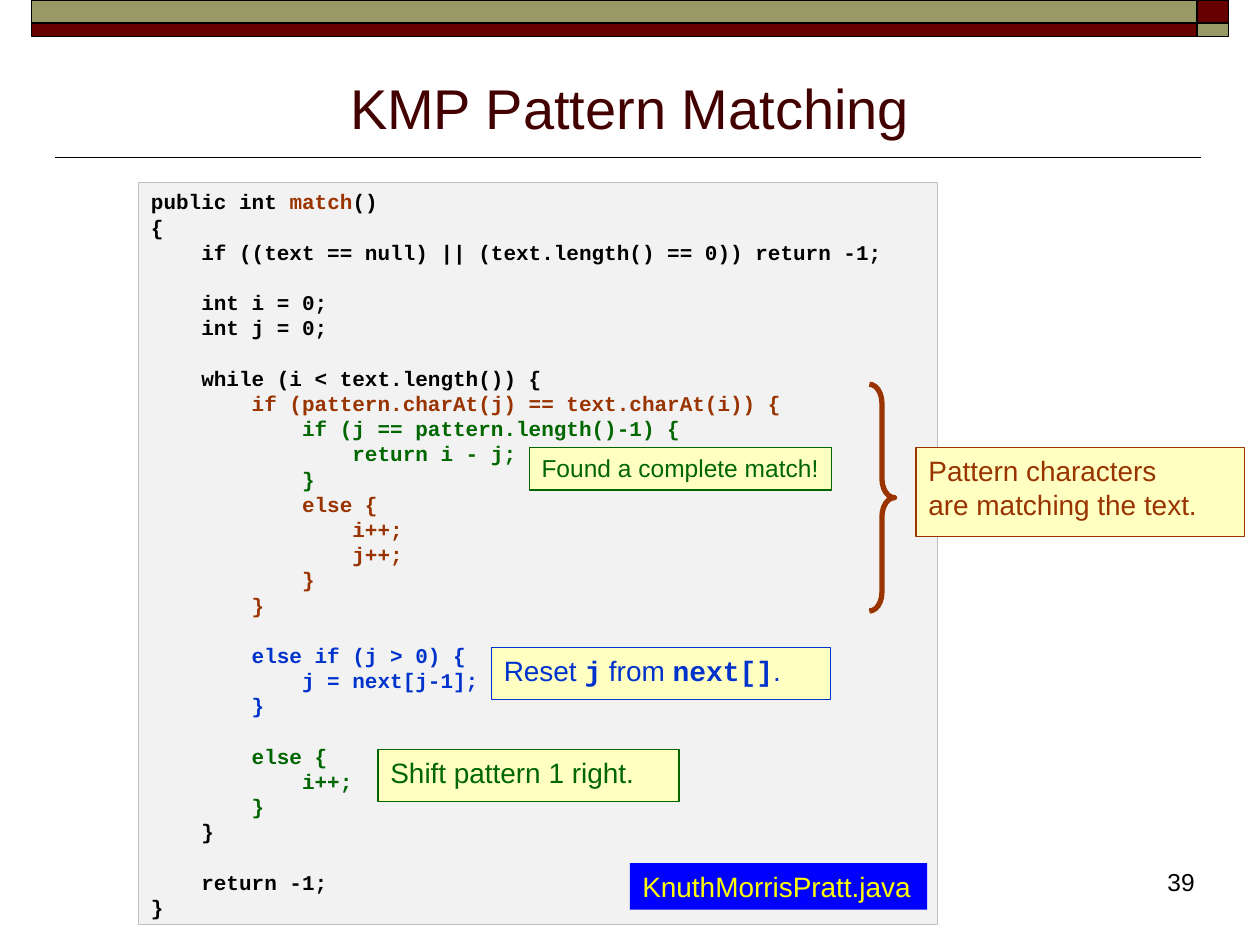
from lxml import etree
from pptx import Presentation
from pptx import util as u
from pptx.dml.color import RGBColor
from pptx.enum import shapes, text
from pptx.oxml import ns

COLORS = {
    "black": "000000", "maroon": "660000", "olive": "999966", "title": "420000",
    "panel": "F2F2F2", "border": "BFBFBF", "note": "FFFFC2", "rust": "993300",
    "green": "006600", "blue": "0033CC", "label": "0000FF", "yellow": "FFFF00",
}
SANS, MONO = "Arial", "Courier New"

CODE = [
    ("black", "public int "),
    ("rust", "match"),
    ("black", """()
{
    if ((text == null) || (text.length() == 0)) return -1;

    int i = 0;
    int j = 0;

    while (i < text.length()) {
"""),
    ("rust", """        if (pattern.charAt(j) == text.charAt(i)) {
"""),
    ("green", """            if (j == pattern.length()-1) {
                return i - j;
            }
"""),
    ("rust", """            else {
                i++;
                j++;
            }
        }

"""),
    ("blue", """        else if (j > 0) {
            j = next[j-1];
        }

"""),
    ("green", """        else {
            i++;
        }
"""),
    ("black", """    }

    return -1;
}"""),
]

NOTES = [
    ((7.27, 3.55, 2.61, 0.71), "rust", 16,
     [("Pattern characters\nare matching the text.", SANS)]),
    ((4.2, 3.55, 2.4, 0.34), "green", 14, [("Found a complete match!", SANS)]),
    ((3.9, 5.14, 2.69, 0.41), "blue", 16,
     [("Reset ", SANS), ("j", MONO), (" from ", SANS), ("next[]", MONO), (".", SANS)]),
    ((3, 5.95, 2.39, 0.41), "green", 16, [("Shift pattern 1 right.", SANS)]),
]


def rgb(name):
    """Return the named colour."""
    return RGBColor.from_string(COLORS[name])


def inches(box):
    """Convert a box of numbers to lengths."""
    return [u.Inches(value) for value in box]


def format_run(run, color, size, font):
    """Set the look of a run; code type is bold."""
    run.font.name, run.font.size = font, u.Pt(size)
    run.font.bold = font == MONO
    run.font.color.rgb = rgb(color)


def write_segments(frame, segments, size):
    """Write (text, colour, font) segments, with a paragraph for each line."""
    paragraph = frame.paragraphs[0]
    for content, color, font in segments:
        for index, line in enumerate(content.split("\n")):
            if index:
                paragraph = frame.add_paragraph()
            if line:
                run = paragraph.add_run()
                run.text = line
                format_run(run, color, size, font)
    for paragraph in frame.paragraphs:
        paragraph.alignment = text.PP_ALIGN.LEFT
        paragraph.line_spacing = u.Pt(size * 1.2)


def add_block(slide, box, fill, line=None, width=0.75):
    """Add a plain rectangle."""
    shape = slide.shapes.add_shape(shapes.MSO_SHAPE.RECTANGLE, *inches(box))
    shape.shadow.inherit = False
    shape.fill.solid()
    shape.fill.fore_color.rgb = rgb(fill)
    if line:
        shape.line.color.rgb = rgb(line)
        shape.line.width = u.Pt(width)
    else:
        shape.line.fill.background()
    return shape


def add_text_block(slide, box, fill, line, segments, size):
    """Add a rectangle holding unwrapped text from its top left."""
    frame = add_block(slide, box, fill, line).text_frame
    frame.word_wrap = False
    frame.vertical_anchor = text.MSO_ANCHOR.TOP
    write_segments(frame, segments, size)


def add_banner(slide, box):
    """Add the two-row band with swapped colours at its right end."""
    left, top, width, height = box
    end, upper = 0.25, 0.18
    rows = [(top, upper, "olive", "maroon"),
            (top + upper, height - upper, "maroon", "olive")]
    for row_top, row_height, main, corner in rows:
        add_block(slide, (left, row_top, width - end, row_height), main, "black", 1)
        add_block(slide, (left + width - end, row_top, end, row_height), corner, "black", 1)


def add_title(slide, box):
    """Fill the title placeholder and rule a line below it."""
    title = slide.shapes.title
    title.left, title.top, title.width, title.height = inches(box)
    frame = title.text_frame
    frame.text = "KMP Pattern Matching"
    frame.vertical_anchor = text.MSO_ANCHOR.BOTTOM
    frame.paragraphs[0].alignment = text.PP_ALIGN.CENTER
    format_run(frame.paragraphs[0].runs[0], "title", 32, SANS)
    rule = slide.shapes.add_connector(
        shapes.MSO_CONNECTOR.STRAIGHT, *inches((0.44, 1.25, 9.53, 1.25)))
    rule.line.color.rgb = rgb("black")
    rule.line.width = u.Pt(1)
    etree.SubElement(rule._element.spPr, ns.qn("a:effectLst"))


def add_code(slide, box):
    """Add the listing panel."""
    segments = [(content, color, MONO) for color, content in CODE]
    add_text_block(slide, box, "panel", "border", segments, 12)


def add_notes(slide):
    """Add the notes beside the code they explain."""
    for box, color, size, parts in NOTES:
        segments = [(content, color, font) for content, font in parts]
        add_text_block(slide, box, "note", color, segments, size)


def add_brace(slide, box):
    """Add the brace that spans the matching branch."""
    brace = slide.shapes.add_shape(shapes.MSO_SHAPE.RIGHT_BRACE, *inches(box))
    brace.shadow.inherit = False
    brace.adjustments[0], brace.adjustments[1] = 0.75, 0.5
    brace.fill.background()
    brace.line.color.rgb = rgb("rust")
    brace.line.width = u.Pt(3)


def add_page_number(slide, box):
    """Add the page number, aligned right."""
    frame = slide.shapes.add_textbox(*inches(box)).text_frame
    frame.word_wrap = True
    write_segments(frame, [("39", "black", SANS)], 14)
    frame.paragraphs[0].alignment = text.PP_ALIGN.RIGHT


def main():
    """Build and save the slide."""
    presentation = Presentation()
    presentation.slide_width, presentation.slide_height = inches((10, 7.5))
    slide = presentation.slides.add_slide(presentation.slide_layouts[5])
    add_banner(slide, (0.25, 0, 9.5, 0.29))
    add_title(slide, (0.5, 0.45, 9, 0.72))
    add_page_number(slide, (7.5, 6.83, 2.08, 0.5))
    add_code(slide, (1.1, 1.45, 6.34, 5.89))
    add_notes(slide)
    add_brace(slide, (6.9, 3.05, 0.2, 1.8))
    add_text_block(slide, (5, 6.85, 2.36, 0.37), "label", None,
                   [("KnuthMorrisPratt.java", "yellow", SANS)], 16)
    presentation.save("out.pptx")


if __name__ == "__main__":
    main()
